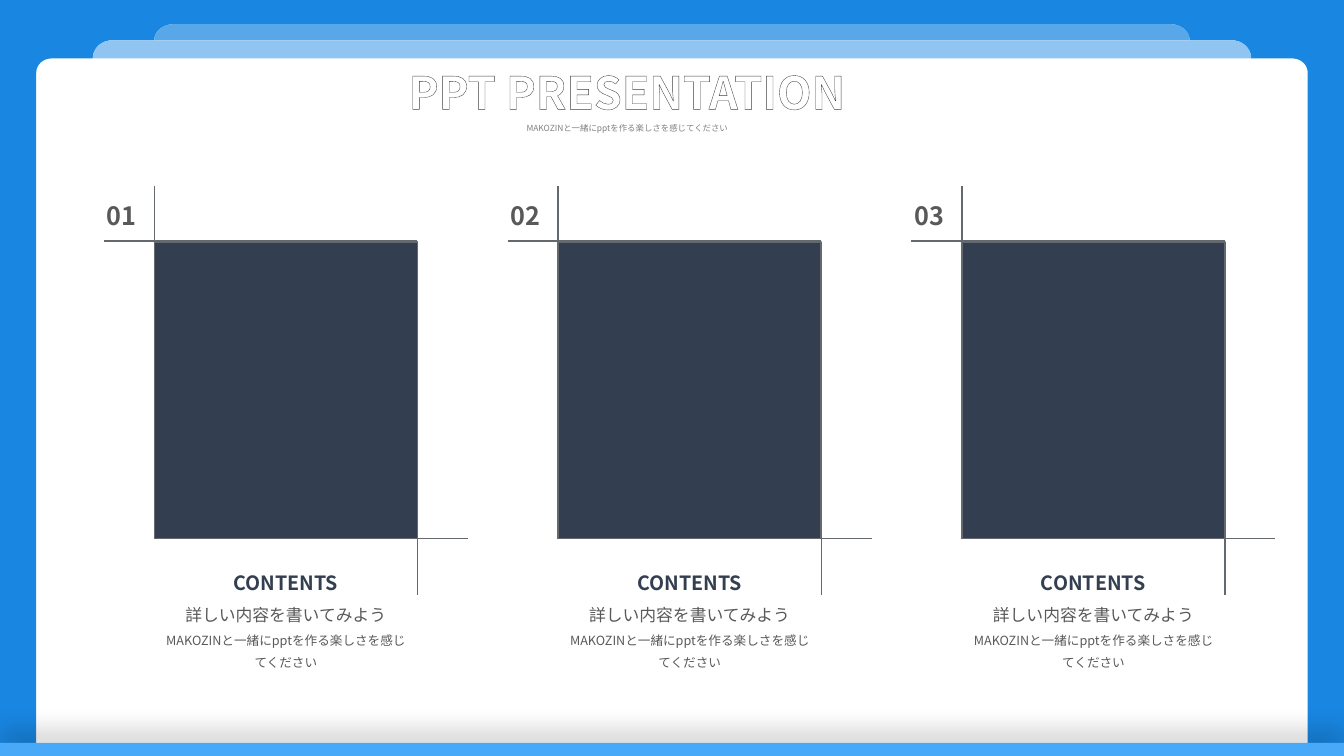
import math

from lxml import etree
from pptx import Presentation
from pptx.dml.color import RGBColor
from pptx.enum import shapes as shape_types, text as text_types
from pptx.oxml import ns
from pptx.util import Inches, Pt

FONT = "Noto Sans CJK KR"
BLUE = RGBColor(0x19, 0x86, 0xE1)
MID_BLUE = RGBColor(0x57, 0xA7, 0xE9)
PALE_BLUE = RGBColor(0x91, 0xC5, 0xF1)
BAR_BLUE = RGBColor(0x48, 0xA9, 0xF8)
NAVY = RGBColor(0x33, 0x3F, 0x50)
LINE_GRAY = RGBColor(0x64, 0x69, 0x6D)
TEXT_GRAY = RGBColor(0x59, 0x59, 0x59)
SUBTITLE_GRAY = RGBColor(0x80, 0x80, 0x80)
OUTLINE_GRAY = RGBColor(0x40, 0x40, 0x40)
BLACK = RGBColor(0, 0, 0)
WHITE = RGBColor(0xFF, 0xFF, 0xFF)

SLIDE_WIDTH, SLIDE_HEIGHT = 13.33, 7.5
TAGLINE = "MAKOZINと一緒にpptを作る楽しさを感じてください"

# Left, top, base and corner width of each stacked sheet
PANEL = (0.36, 0.58, 0.72, 0.15)
MIDDLE_SHEET = (0.92, 0.4, 0.58, 0.19)
BACK_SHEET = (1.53, 0.24, 0.4, 0.19)

FIRST_CARD_LEFT, LAST_CARD_LEFT = 1.53, 9.54
CARD_NUMBERS = ("01", "02", "03")


def add_child(parent, tag, **attributes):
    return etree.SubElement(parent, ns.qn(tag), attributes)


def add_color(parent, color, alpha=None):
    color_element = add_child(parent, "a:srgbClr", val=str(color))
    if alpha is not None:
        add_child(color_element, "a:alpha", val=str(alpha * 1000))


def outline_text(run, color, width):
    line = etree.Element(ns.qn("a:ln"), w=str(Pt(width)))
    add_color(add_child(line, "a:solidFill"), color)
    run._r.get_or_add_rPr().insert(0, line)


def write(paragraph, text, size, color, bold=False, spacing=1.5, outline=None):
    paragraph.alignment = text_types.PP_ALIGN.CENTER
    paragraph.line_spacing = spacing
    run = paragraph.add_run()
    run.text = text
    run.font.size = Pt(size)
    run.font.bold = bold
    run.font.color.rgb = color
    run.font.name = FONT
    add_child(run._r.get_or_add_rPr(), "a:ea", typeface=FONT)
    if outline:
        outline_text(run, *outline)


def add_text(slide, box, lines, wrap=True, side_margin=0.1):
    """Add a text box; each line is a dict of arguments for write()."""
    frame = slide.shapes.add_textbox(*map(Inches, box)).text_frame
    frame.word_wrap = wrap
    frame.auto_size = text_types.MSO_AUTO_SIZE.SHAPE_TO_FIT_TEXT
    frame.margin_left = frame.margin_right = Inches(side_margin)
    for index, line in enumerate(lines):
        write(frame.add_paragraph() if index else frame.paragraphs[0], **line)


def style_shape(shape, fill, line=None):
    shape.shadow.inherit = False
    shape.fill.solid()
    shape.fill.fore_color.rgb = fill
    if line:
        shape.line.color.rgb = line
        shape.line.width = Pt(1)
    else:
        shape.line.fill.background()


def add_line(slide, start, end):
    line = slide.shapes.add_connector(
        shape_types.MSO_CONNECTOR.STRAIGHT, *map(Inches, start + end))
    line.line.color.rgb = LINE_GRAY
    line.line.width = Pt(1)
    add_child(line.element.spPr, "a:effectLst")


def sheet_corner(left, top, base, width, steps=12):
    """Return points on the rounded upper left corner, from the base up."""
    angles = [math.pi / 2 * step / steps for step in range(steps + 1)]
    return [(left + width * (1 - math.cos(angle)), base - (base - top) * math.sin(angle))
            for angle in angles]


def mirror(points):
    return [(SLIDE_WIDTH - x, y) for x, y in reversed(points)]


def add_outline(slide, points, fill):
    start, *rest = [(Inches(x), Inches(y)) for x, y in points]
    builder = slide.shapes.build_freeform(*start)
    builder.add_line_segments(rest, close=True)
    style_shape(builder.convert_to_shape(), fill)


def add_backdrop(slide):
    bottom = 7.51
    inner_edge = [(PANEL[0], bottom)]
    for sheet in (PANEL, MIDDLE_SHEET, BACK_SHEET):
        inner_edge += sheet_corner(*sheet)
    outer_edge = [(SLIDE_WIDTH, bottom), (SLIDE_WIDTH, 0), (0, 0), (0, bottom)]
    add_outline(slide, inner_edge + mirror(inner_edge) + outer_edge, BLUE)

    for sheet, color in ((BACK_SHEET, MID_BLUE), (MIDDLE_SHEET, PALE_BLUE)):
        corner = sheet_corner(*sheet)
        add_outline(slide, corner + mirror(corner), color)

    bar = slide.shapes.add_shape(
        shape_types.MSO_SHAPE.ROUND_1_RECTANGLE,
        0, Inches(7.37), Inches(SLIDE_WIDTH), Inches(0.15))
    bar.adjustments[0] = 0
    style_shape(bar, BAR_BLUE)
    effects = bar.element.spPr.find(ns.qn("a:effectLst"))
    shadow = add_child(effects, "a:outerShdw", blurRad=str(Pt(17)), dist=str(Pt(8)),
                       dir=str(270 * 60000), algn="b", rotWithShape="0")
    add_color(shadow, BLACK, alpha=25)


def add_title(slide, left, top, width, height):
    title = slide.shapes.title
    title.left, title.top, title.width, title.height = map(
        Inches, (left, top, width, height))
    frame = title.text_frame
    frame.auto_size = text_types.MSO_AUTO_SIZE.NONE
    frame.vertical_anchor = text_types.MSO_ANCHOR.TOP
    frame.word_wrap = True
    write(frame.paragraphs[0], "PPT PRESENTATION", size=32, color=WHITE, bold=True,
          spacing=1.0, outline=(OUTLINE_GRAY, 0.75))
    write(frame.add_paragraph(), TAGLINE, size=6, color=SUBTITLE_GRAY)
    slide.shapes.element.append(title.element)


def add_card(slide, number, left, top, width, height):
    right, bottom = left + width, top + height
    block = slide.shapes.add_shape(
        shape_types.MSO_SHAPE.RECTANGLE, *map(Inches, (left, top, width, height)))
    style_shape(block, NAVY, LINE_GRAY)

    overhang = 0.5
    add_line(slide, (left, top - 0.55), (left, bottom + 0.01))
    add_line(slide, (right, top), (right, bottom + 0.56))
    add_line(slide, (left, bottom), (right + overhang, bottom))
    add_line(slide, (left - overhang, top - 0.01), (right, top - 0.01))

    add_text(slide, (left - 0.57, top - 0.61, 0.49, 0.5),
             [dict(text=number, size=18, color=TEXT_GRAY, bold=True)],
             wrap=False, side_margin=0)
    add_text(slide, (left, bottom + 0.16, width, 1.21), [
        dict(text="CONTENTS", size=14, color=NAVY, bold=True),
        dict(text="詳しい内容を書いてみよう", size=12, color=TEXT_GRAY),
        dict(text=TAGLINE, size=9, color=TEXT_GRAY),
    ])


def main():
    presentation = Presentation()
    presentation.slide_width = Inches(SLIDE_WIDTH)
    presentation.slide_height = Inches(SLIDE_HEIGHT)
    slide = presentation.slides.add_slide(
        presentation.slide_layouts.get_by_name("Title Only"))
    add_backdrop(slide)
    pitch = (LAST_CARD_LEFT - FIRST_CARD_LEFT) / (len(CARD_NUMBERS) - 1)
    for index, number in enumerate(CARD_NUMBERS):
        add_card(slide, number, FIRST_CARD_LEFT + index * pitch, 2.4, 2.61, 2.94)
    add_title(slide, 3.75, 0.59, 4.94, 0.78)
    presentation.save("out.pptx")


if __name__ == "__main__":
    main()
